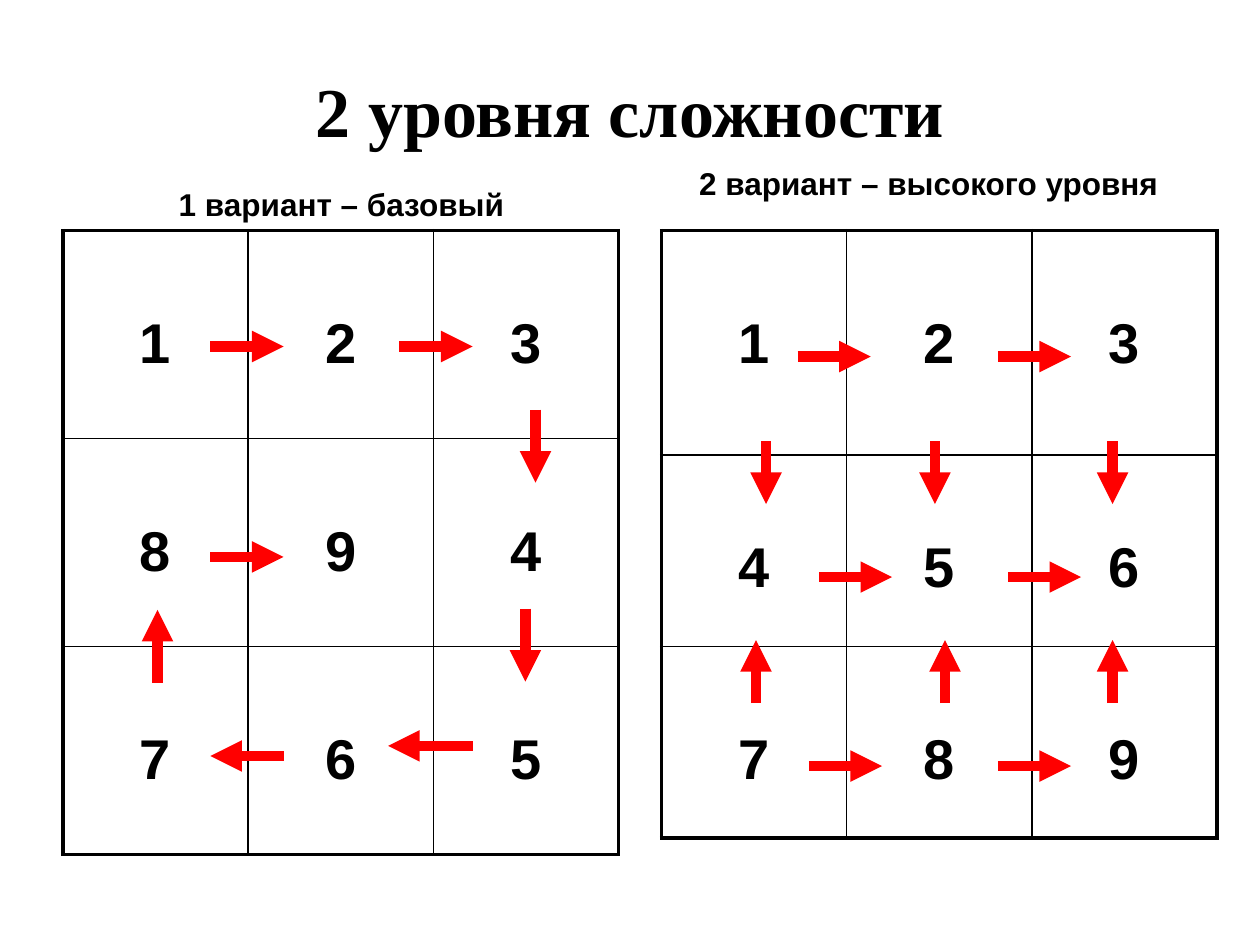
import pptx
import pptx.util
import pptx.dml.color
import pptx.enum.shapes
import pptx.enum.text
import pptx.oxml
import pptx.oxml.ns
from lxml import etree

Inches = pptx.util.Inches
Pt = pptx.util.Pt
BLACK = pptx.dml.color.RGBColor(0, 0, 0)
RED = pptx.dml.color.RGBColor(0xFF, 0, 0)
CENTER = pptx.enum.text.PP_ALIGN.CENTER

TOP = 1.83
COL = 1.47
LONG, SHORT = 0.58, 0.5  # arrow lengths


def style(para, size, face="Arial"):
    para.alignment = CENTER
    para.font.name = face
    para.font.size = Pt(size)
    para.font.bold = True
    para.font.color.rgb = BLACK


def add_title(slide, box, text):
    title = slide.shapes.title
    title.left, title.top, title.width, title.height = map(Inches, box)
    frame = title.text_frame
    frame.text = text
    frame.vertical_anchor = pptx.enum.text.MSO_ANCHOR.MIDDLE
    style(frame.paragraphs[0], 40, "Times New Roman")


def add_label(slide, box, text):
    frame = slide.shapes.add_textbox(*map(Inches, box)).text_frame
    frame.word_wrap = True
    frame.auto_size = pptx.enum.text.MSO_AUTO_SIZE.SHAPE_TO_FIT_TEXT
    frame.text = text
    style(frame.paragraphs[0], 18)


def add_edge(cell, side, width):
    # Borders come before the fill in the cell properties
    props = cell._tc.get_or_add_tcPr()
    edge = pptx.oxml.parse_xml(
        f'<a:{side} {pptx.oxml.ns.nsdecls("a")} w="{Pt(width)}">'
        f'<a:solidFill><a:srgbClr val="{BLACK}"/></a:solidFill></a:{side}>')
    props.append(edge)


def add_grid(slide, left, heights, digits):
    frame = slide.shapes.add_table(
        3, 3, Inches(left), Inches(TOP), Inches(3 * COL), Inches(sum(heights)))
    table = frame.table
    table.first_row = table.horz_banding = False
    for i in range(3):
        table.columns[i].width = Inches(COL)
        table.rows[i].height = Inches(heights[i])
    for row, line in enumerate(digits):
        for col, digit in enumerate(line):
            cell = table.cell(row, col)
            cell.margin_top = Inches(0.65)
            cell.text = digit
            style(cell.text_frame.paragraphs[0], 32)
            outer = {"lnL": col == 0, "lnR": col == 2,
                     "lnT": row == 0, "lnB": row == 2}
            for side, thick in outer.items():
                add_edge(cell, side, 2.25 if thick else 1)
            cell.fill.background()


def add_arrow(slide, x, y, dx, dy):
    arrow = slide.shapes.add_connector(
        pptx.enum.shapes.MSO_CONNECTOR.STRAIGHT,
        Inches(x), Inches(y), Inches(x + dx), Inches(y + dy))
    arrow.line.color.rgb = RED
    arrow.line.width = Pt(6)
    tip = etree.SubElement(arrow.line._get_or_add_ln(),
                           pptx.oxml.ns.qn("a:tailEnd"))
    tip.set("type", "triangle")
    etree.SubElement(arrow._element.spPr, pptx.oxml.ns.qn("a:effectLst"))


def add_task(slide, left, label, heights, digits, arrows):
    """Label, number grid and arrows; arrow starts are relative to the grid."""
    text, shift, rise = label
    add_label(slide, (left + shift, TOP - rise, 4.58, 0.4), text)
    add_grid(slide, left, heights, digits)
    for x, y, dx, dy in arrows:
        add_arrow(slide, left + x, TOP + y, dx, dy)


def main():
    deck = pptx.Presentation()
    deck.slide_width, deck.slide_height = Inches(10), Inches(7.5)
    slide = deck.slides.add_slide(deck.slide_layouts[5])
    add_title(slide, (0.5, 0.58, 9, 0.58), "2 уровня сложности")

    # Basic task: a spiral path
    spiral = [
        (1.17, 0.92, LONG, 0), (2.67, 0.92, LONG, 0),
        (3.75, 1.42, 0, LONG), (3.67, 3, 0, LONG),
        (3.25, 4.09, -0.67, 0), (1.75, 4.17, -LONG, 0),
        (0.75, 3.59, 0, -LONG), (1.17, 2.59, LONG, 0),
    ]
    add_task(slide, 0.5, ("1 вариант – базовый", -0.08, 0.41),
             (1.65, 1.65, 1.65), ("123", "894", "765"), spiral)

    # Advanced task: right along rows, inward along columns
    across = [(1.08, 1), (2.67, 1), (1.25, 2.75), (2.75, 2.75),
              (1.17, 4.25), (2.67, 4.25)]
    links = [(x, y, LONG, 0) for x, y in across]
    links += [(x, 1.67, 0, SHORT) for x in (0.83, 2.17, 3.58)]
    links += [(x, 3.75, 0, -SHORT) for x in (0.75, 2.25, 3.58)]
    add_task(slide, 5.25, ("2 вариант – высокого уровня", -0.17, 0.58),
             (1.78, 1.52, 1.52), ("123", "456", "789"), links)

    deck.save("out.pptx")


if __name__ == "__main__":
    main()
